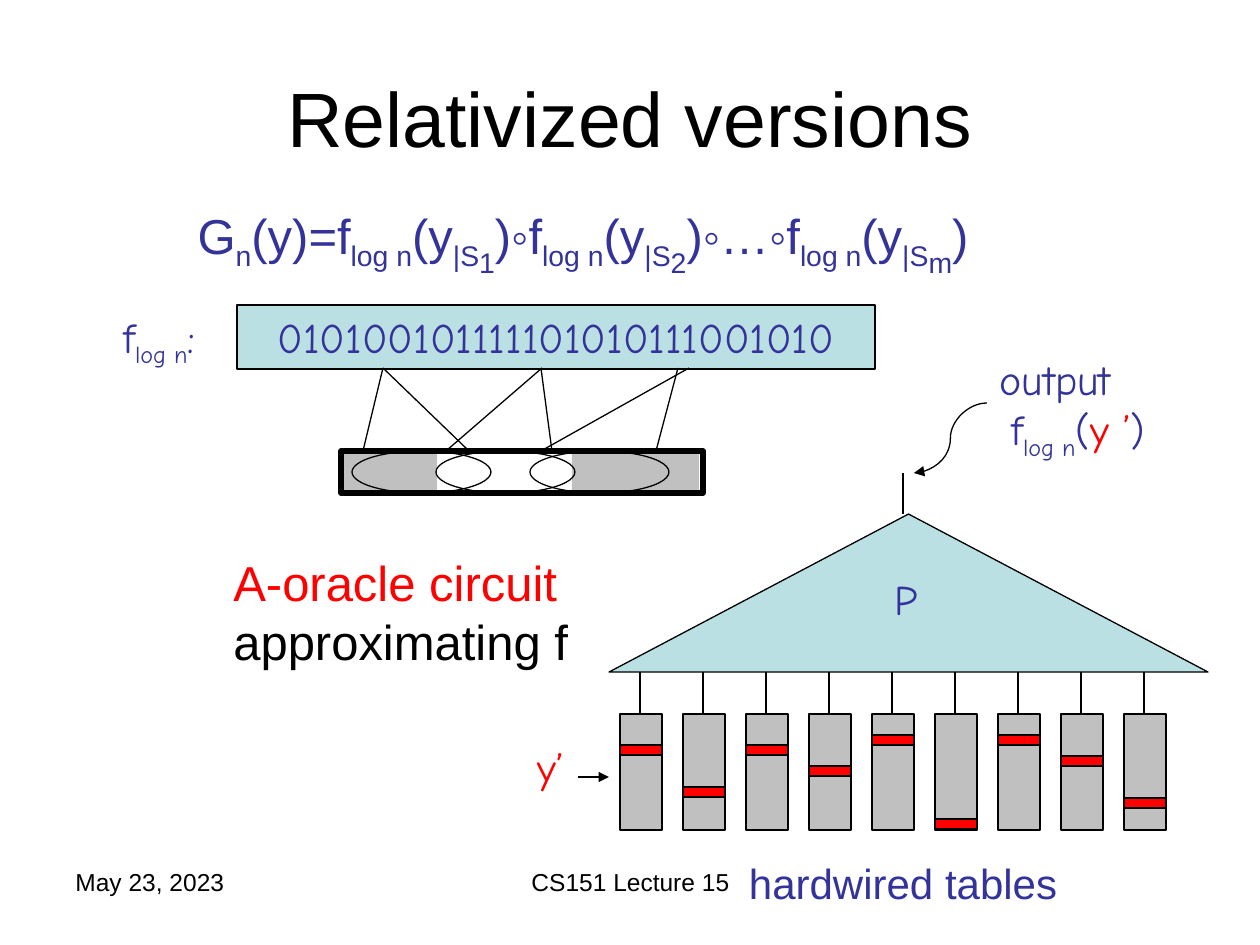
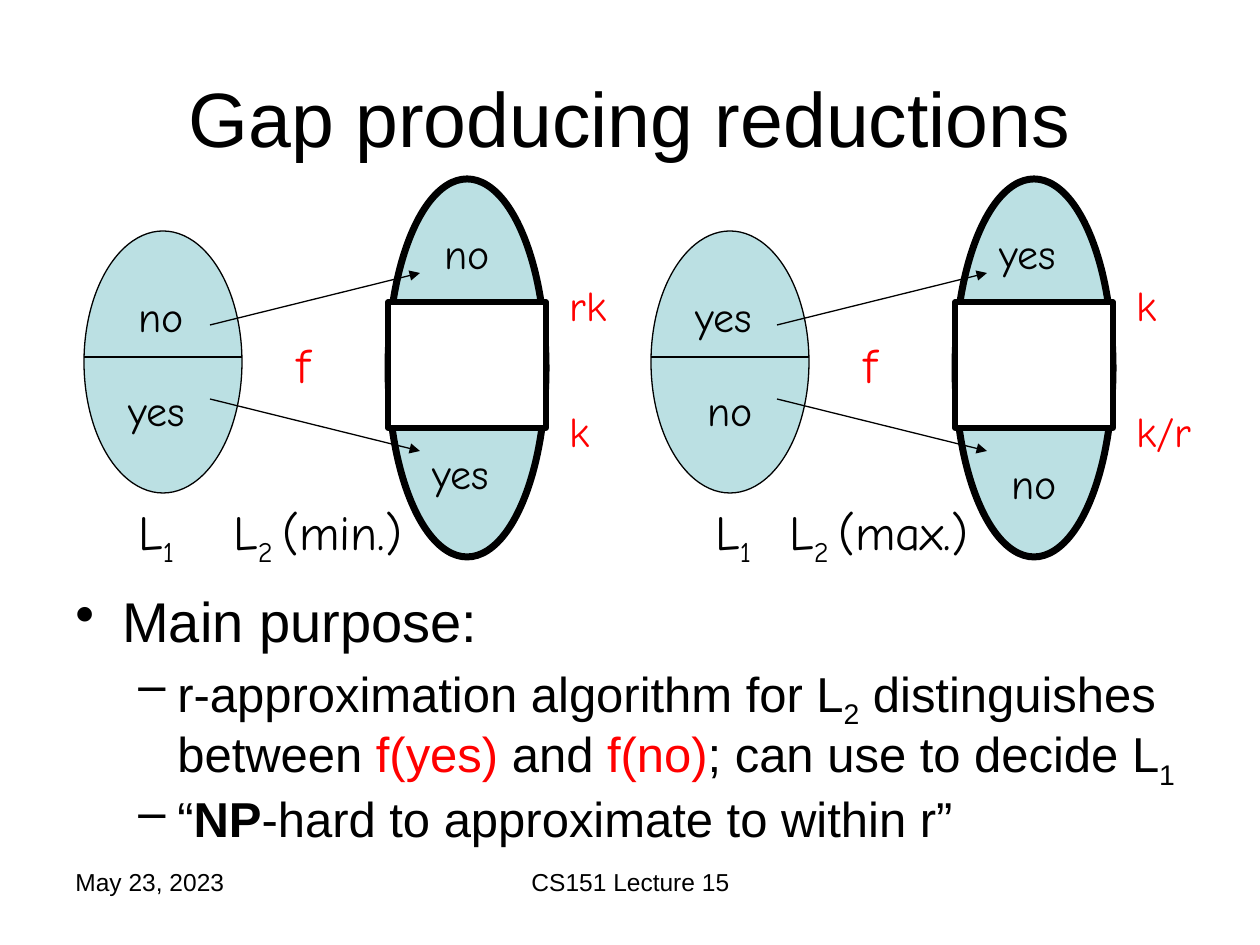
from dataclasses import dataclass
from typing import Optional

from lxml.etree import SubElement
from pptx import Presentation
from pptx.dml.color import RGBColor
from pptx.enum.shapes import MSO_CONNECTOR, MSO_SHAPE
from pptx.enum.text import MSO_ANCHOR, PP_ALIGN
from pptx.oxml.ns import qn
from pptx.util import Emu, Pt

BLACK = RGBColor(0x00, 0x00, 0x00)
WHITE = RGBColor(0xFF, 0xFF, 0xFF)
RED = RGBColor(0xFF, 0x00, 0x00)
INDIGO = RGBColor(0x33, 0x33, 0x99)
PALE_TEAL = RGBColor(0xBB, 0xE0, 0xE3)
GRAY = RGBColor(0xC0, 0xC0, 0xC0)

SANS = "Arial"
HAND = "Comic Neue"
PX_PER_INCH = 126
LEFT, CENTER = PP_ALIGN.LEFT, PP_ALIGN.CENTER
RECT, OVAL = MSO_SHAPE.RECTANGLE, MSO_SHAPE.OVAL


def px(length):
    return Emu(round(length * 914400 / PX_PER_INCH))


@dataclass
class Part:
    """A stretch of text that differs from the paragraph's style."""
    text: str
    base: int = 0
    color: Optional[RGBColor] = None
    bold: bool = False


def sub(text, depth=25):
    return Part(text, base=-depth)


def red(text):
    return Part(text, color=RED)


class Deck:
    def __init__(self):
        self.prs = Presentation()
        self.prs.slide_width, self.prs.slide_height = px(1260), px(945)
        self.slide = None

    def new_slide(self, title):
        self.slide = self.prs.slides.add_slide(self.prs.slide_layouts[6])
        self.text((63, 38, 1134, 158), [title], 44, align=CENTER,
                  anchor=MSO_ANCHOR.MIDDLE)
        self.text((63, 861, 294, 65), ["May 23, 2023"], 14)
        self.text((431, 861, 399, 65), ["CS151 Lecture 15"], 14, align=CENTER)

    def fill_paragraph(self, paragraph, parts, size, color=BLACK, font=SANS,
                       align=LEFT, before=0):
        """Fill one paragraph; before is the space above in percent."""
        paragraph.alignment = align
        paragraph.space_before = Pt(0)
        if before:
            space = paragraph._p.pPr.find(qn("a:spcBef"))
            space.clear()
            SubElement(space, qn("a:spcPct")).set("val", str(before * 1000))
        for part in parts:
            if isinstance(part, str):
                part = Part(part)
            run = paragraph.add_run()
            run.text = part.text
            run.font.name = font
            run.font.size = Pt(size)
            run.font.bold = part.bold
            run.font.color.rgb = part.color or color
            if part.base:
                run._r.get_or_add_rPr().set("baseline", str(part.base * 1000))

    def frame(self, box, anchor=MSO_ANCHOR.TOP):
        text_frame = self.slide.shapes.add_textbox(*map(px, box)).text_frame
        text_frame.word_wrap = True
        text_frame.vertical_anchor = anchor
        return text_frame

    def text(self, box, parts, size, anchor=MSO_ANCHOR.TOP, **style):
        text_frame = self.frame(box, anchor)
        self.fill_paragraph(text_frame.paragraphs[0], parts, size, **style)
        return text_frame

    def hand(self, box, parts, size=24, **style):
        return self.text(box, parts, size, font=HAND, before=50, **style)

    def bullets(self, box, items):
        """Each item is (mark, margin, hanging indent, size, parts)."""
        text_frame = self.frame(box)
        for i, (mark, margin, hang, size, parts) in enumerate(items):
            paragraph = (text_frame.add_paragraph() if i
                         else text_frame.paragraphs[0])
            paragraph.line_spacing = 0.9
            self.fill_paragraph(paragraph, parts, size, before=20)
            properties = paragraph._p.get_or_add_pPr()
            properties.set("marL", str(px(margin)))
            properties.set("indent", str(-px(hang)))
            SubElement(properties, qn("a:buChar")).set("char", mark)

    def shape(self, kind, box, fill=None, line=0.75):
        shape = self.slide.shapes.add_shape(kind, *map(px, box))
        shape.shadow.inherit = False
        if fill is None:
            shape.fill.background()
        else:
            shape.fill.solid()
            shape.fill.fore_color.rgb = fill
        if line:
            shape.line.color.rgb = BLACK
            shape.line.width = Pt(line)
        else:
            shape.line.fill.background()
        return shape

    def line(self, start, end, arrow=False, kind=MSO_CONNECTOR.STRAIGHT):
        connector = self.slide.shapes.add_connector(
            kind, *map(px, (*start, *end)))
        connector.line.color.rgb = BLACK
        connector.line.width = Pt(0.75)
        properties = connector._element.spPr
        if arrow:
            tail = SubElement(properties.find(qn("a:ln")), qn("a:tailEnd"))
            tail.set("type", "triangle")
        SubElement(properties, qn("a:effectLst"))


def relativized_versions(deck):
    deck.new_slide("Relativized versions")

    # Generator formula
    log_n = sub("log n")
    formula = ["G", sub("n"), "(y)=f"]
    for index, joint in (("1", ")◦f"), ("2", ")◦…◦f"), ("m", ")")):
        formula += [log_n, "(y", sub("|S"), sub(index, 40), joint]
    deck.text((63, 199, 1040, 73), formula, 28, color=INDIGO, align=CENTER,
              before=20)

    # Truth table of f
    truth_table = deck.shape(RECT, (237, 305, 638, 64), PALE_TEAL)
    truth_table.text_frame.vertical_anchor = MSO_ANCHOR.TOP
    deck.fill_paragraph(truth_table.text_frame.paragraphs[0],
                        ["010100101111101010111001010"], 24, color=INDIGO,
                        font=HAND, align=CENTER, before=50)
    deck.hand((111, 305, 127, 63), ["f", log_n, ":"], color=INDIGO)

    # Seed with its overlapping subsets
    for left, width in ((572, 127), (341, 96)):
        deck.shape(RECT, (left, 451, width, 42), GRAY, line=0)
    deck.shape(RECT, (341, 451, 362, 42), line=3)
    for left in (352, 436, 530):
        deck.shape(OVAL, (left, 451, 139, 42))
    for top_x, bottom_x in ((383, 363), (383, 469), (542, 446),
                            (541, 552), (689, 541), (678, 656)):
        deck.line((top_x, 368), (bottom_x, 451))

    # Oracle circuit
    deck.shape(MSO_SHAPE.ISOSCELES_TRIANGLE, (609, 514, 599, 158), PALE_TEAL)
    deck.hand((882, 567, 63, 63), ["P"], color=INDIGO)
    deck.line((903, 473), (903, 514))
    output = deck.hand((987, 347, 189, 113), ["output"], color=INDIGO)
    value = output.add_paragraph()
    deck.fill_paragraph(value, ["f", log_n, "(", red("y ’"), ")"], 24,
                        color=INDIGO, font=HAND)
    value._p.pPr.set("marL", str(px(12)))
    deck.line((987, 403), (914, 473), arrow=True, kind=MSO_CONNECTOR.CURVE)

    # Hardwired tables, each with its looked-up row
    for i, row in enumerate((3, 7, 3, 5, 2, 10, 2, 4, 8)):
        left = 620 + 63 * i
        deck.line((left + 20, 672), (left + 20, 714))
        deck.shape(RECT, (left, 714, 42, 116), GRAY)
        deck.shape(RECT, (left, 714 + 21 * row // 2, 42, 10), RED)
    deck.line((578, 777), (609, 777), arrow=True)
    deck.text((693, 851, 420, 63), ["hardwired tables"], 24, color=INDIGO,
              align=CENTER, before=50)
    deck.hand((525, 735, 63, 63), ["y’"], color=RED)
    deck.text((221, 546, 378, 131),
              [red("A-oracle circuit "), "approximating f"], 28)


def reduction(deck, left, goal, words, bounds, l1_x, l2_x):
    """Map the halves of L1 to the two ends of L2, gap in between."""
    # Source language
    deck.shape(OVAL, (left, 231, 158, 262), PALE_TEAL)
    deck.line((left, 357), (left + 158, 357))
    # Target problem with its gap
    deck.shape(OVAL, (left + 304, 179, 158, 378), PALE_TEAL, line=4)
    deck.shape(RECT, (left + 304, 302, 158, 126), WHITE, line=3)
    # Mapping f
    deck.line((left + 126, 325), (left + 336, 273), arrow=True)
    deck.line((left + 126, 399), (left + 336, 451), arrow=True)
    deck.hand((left + 200, 328, 94, 72), ["f"], 28, color=RED)
    # Labels
    for word, x, y, align in words:
        deck.hand((left + x, y, 94, 63), [word], align=align)
    for bound, y in zip(bounds, (273, 399)):
        deck.hand((left + 473, y, 105, 63), [bound], color=RED)
    deck.hand((left + l1_x, 495, 94, 72), ["L", sub("1")], 28)
    deck.hand((left + l2_x, 495, 230, 72), ["L", sub("2 "), goal], 28)


def gap_producing_reductions(deck):
    deck.new_slide("Gap producing reductions")

    # Minimization and maximization
    reduction(deck, 84, "(min.)",
              [("no", 42, 284, LEFT), ("yes", 32, 378, LEFT),
               ("no", 336, 221, CENTER), ("yes", 336, 441, LEFT)],
              ("rk", "k"), 42, 137)
    reduction(deck, 651, "(max.)",
              [("yes", 32, 284, LEFT), ("no", 32, 378, CENTER),
               ("yes", 336, 221, LEFT), ("no", 336, 451, CENTER)],
              ("k", "k/r"), 52, 126)

    # Purpose
    deck.bullets((63, 588, 1134, 256), [
        ("•", 47, 47, 32, ["Main purpose:"]),
        ("–", 102, 39, 28, [
            "r-approximation algorithm for L", sub("2"),
            " distinguishes between ", red("f(yes)"), " and ", red("f(no)"),
            "; can use to decide L", sub("1")]),
        ("–", 102, 39, 28, [
            "“", Part("NP", bold=True), "-hard to approximate to within r”"]),
    ])


def main():
    deck = Deck()
    relativized_versions(deck)
    gap_producing_reductions(deck)
    deck.prs.save("out.pptx")


if __name__ == "__main__":
    main()
